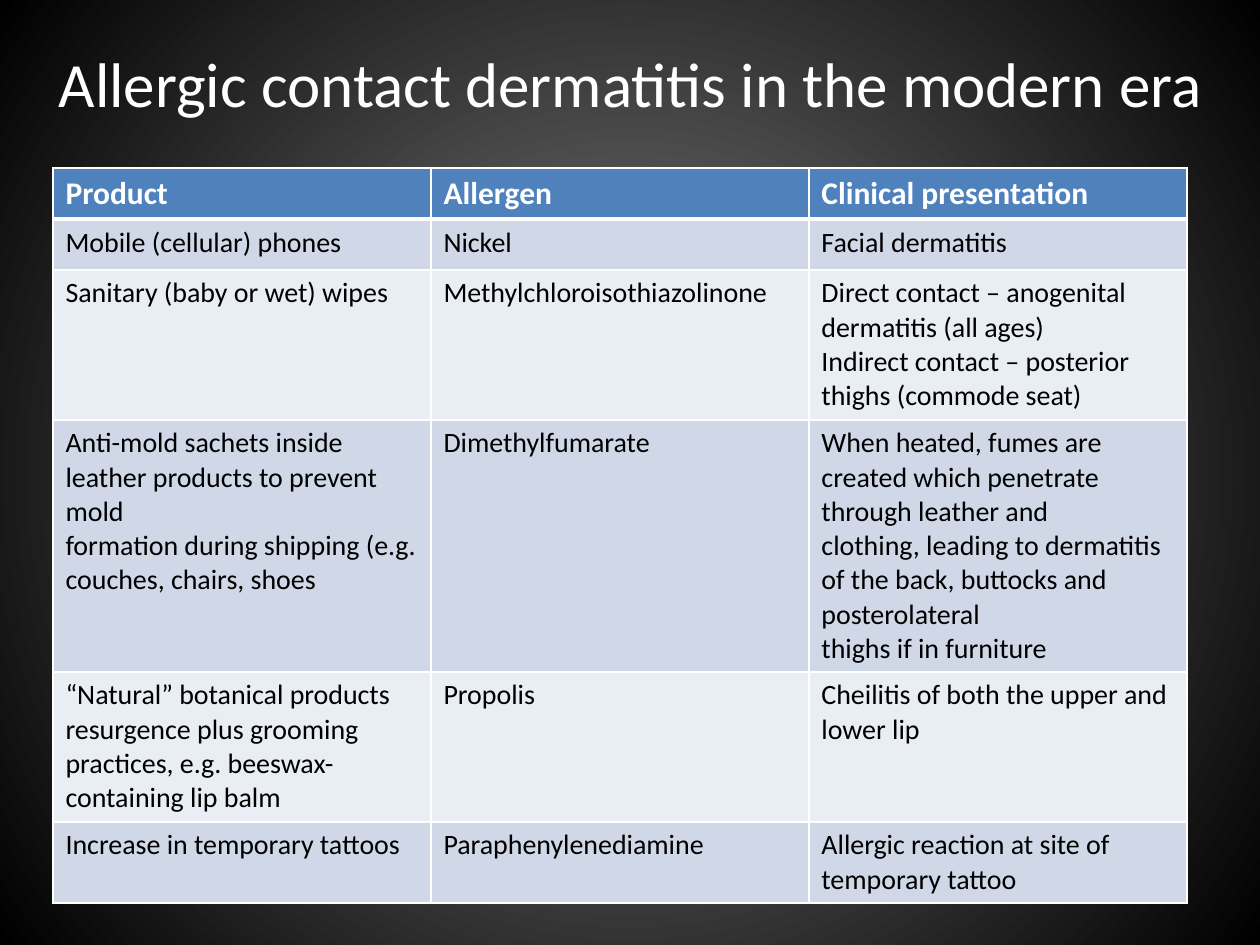
from lxml.etree import SubElement
from pptx import Presentation
from pptx.dml.color import RGBColor
from pptx.enum.text import MSO_ANCHOR, PP_ALIGN
from pptx.oxml.ns import qn
from pptx.util import Pt

PX = 914400 // 126
WHITE, BLACK, GRAY = "FFFFFF", "000000", "7F7F7F"
HEADER_FILL, BAND_FILLS = "4F81BD", ("E9EDF4", "D0D8E8")
HEADER_FORMAT = {"name": "Calibri", "size": Pt(18), "bold": True}
BODY_FORMAT = {"name": "Calibri", "size": Pt(16), "bold": False}
TITLE_FORMAT = {"name": "Calibri", "size": Pt(36), "bold": False}
ROW_HEIGHTS = (51, 51, 150, 252, 150, 81)
COLUMN_WIDTH = 378
ROWS = (
    ("Product", "Allergen", "Clinical presentation"),
    ("Mobile (cellular) phones", "Nickel", "Facial dermatitis"),
    (
        "Sanitary (baby or wet) wipes",
        "Methylchloroisothiazolinone",
        "Direct contact – anogenital dermatitis (all ages)\n"
        "Indirect contact – posterior thighs (commode seat)",
    ),
    (
        "Anti-mold sachets inside leather products to prevent mold\n"
        "formation during shipping (e.g. couches, chairs, shoes",
        "Dimethylfumarate",
        "When heated, fumes are created which penetrate through leather and\n"
        "clothing, leading to dermatitis of the back, buttocks and posterolateral\n"
        "thighs if in furniture",
    ),
    (
        "“Natural” botanical products resurgence plus grooming\n"
        "practices, e.g. beeswax-containing lip balm",
        "Propolis",
        "Cheilitis of both the upper and lower lip",
    ),
    (
        "Increase in temporary tattoos",
        "Paraphenylenediamine",
        "Allergic reaction at site of temporary tattoo",
    ),
)


def color(value):
    return RGBColor.from_string(value)


def write_text(text_frame, text, text_format, text_color):
    text_frame.text = text
    for paragraph in text_frame.paragraphs:
        for run in paragraph.runs:
            for name, value in text_format.items():
                setattr(run.font, name, value)
            run.font.color.rgb = color(text_color)


presentation = Presentation()
presentation.slide_width = 1260 * PX
presentation.slide_height = 945 * PX
slide = presentation.slides.add_slide(presentation.slide_layouts[6])

background = slide.background.fill
background.gradient()
for stop, position, value in zip(background.gradient_stops, (0, 1), (GRAY, BLACK)):
    stop.position = position
    stop.color.rgb = color(value)
linear = slide.element.find(".//" + qn("a:lin"))
gradient = linear.getparent()
gradient.remove(linear)
circle = SubElement(gradient, qn("a:path"), path="circle")
SubElement(circle, qn("a:fillToRect"), l="50000", t="50000", r="50000", b="50000")

title = slide.shapes.add_textbox(32 * PX, 0, 1197 * PX, 164 * PX)
title.text_frame.word_wrap = True
title.text_frame.vertical_anchor = MSO_ANCHOR.MIDDLE
write_text(title.text_frame, "Allergic contact dermatitis in the modern era", TITLE_FORMAT, WHITE)
title.text_frame.paragraphs[0].alignment = PP_ALIGN.CENTER

table = slide.shapes.add_table(
    len(ROWS), len(ROWS[0]), 53 * PX, 168 * PX,
    len(ROWS[0]) * COLUMN_WIDTH * PX, sum(ROW_HEIGHTS) * PX,
).table
for column in table.columns:
    column.width = COLUMN_WIDTH * PX

for row_index, (texts, height) in enumerate(zip(ROWS, ROW_HEIGHTS)):
    is_header = row_index == 0
    table.rows[row_index].height = height * PX
    for column_index, text in enumerate(texts):
        cell = table.cell(row_index, column_index)
        write_text(
            cell.text_frame, text,
            HEADER_FORMAT if is_header else BODY_FORMAT,
            WHITE if is_header else BLACK,
        )
        widths = {
            "a:lnL": 1,
            "a:lnR": 1,
            "a:lnT": 3 if row_index == 1 else 1,
            "a:lnB": 3 if is_header else 1,
        }
        properties = cell._tc.get_or_add_tcPr()
        for tag, width in widths.items():
            border = SubElement(properties, qn(tag), w=str(Pt(width)))
            SubElement(SubElement(border, qn("a:solidFill")), qn("a:srgbClr"), val=WHITE)
        cell.fill.solid()
        cell.fill.fore_color.rgb = color(HEADER_FILL if is_header else BAND_FILLS[row_index % 2])

presentation.save("out.pptx")
